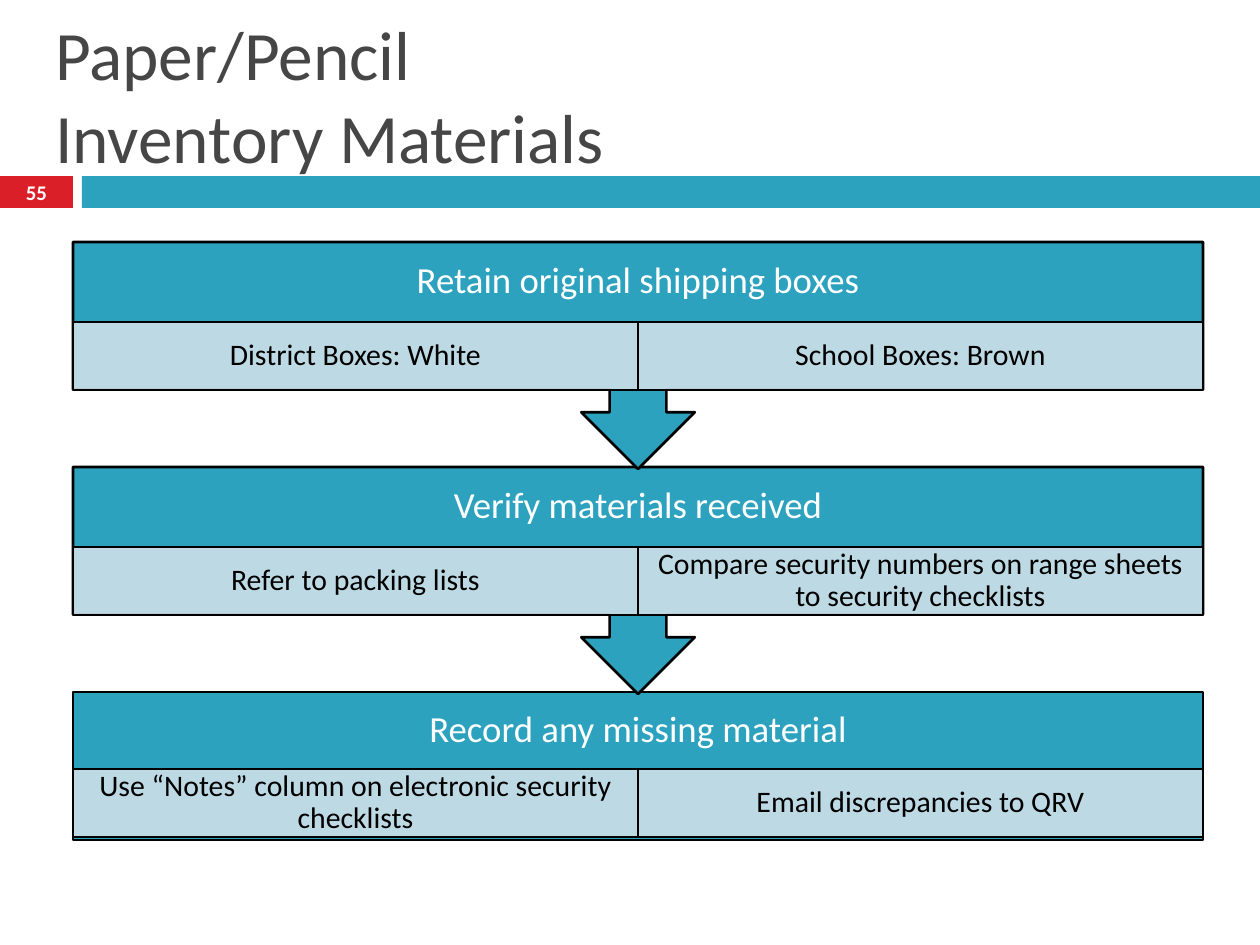
from lxml import etree
from pptx import Presentation
from pptx.dml.color import RGBColor
from pptx.enum.shapes import MSO_SHAPE
from pptx.enum.text import MSO_ANCHOR, MSO_AUTO_SIZE, PP_ALIGN
from pptx.oxml.ns import qn
from pptx.util import Pt

RECT, CALLOUT = MSO_SHAPE.RECTANGLE, MSO_SHAPE.UP_ARROW_CALLOUT
LEFT, CENTER, MIDDLE = PP_ALIGN.LEFT, PP_ALIGN.CENTER, MSO_ANCHOR.MIDDLE
SCALE = 914400 / 126

TITLE = "Paper/Pencil\vInventory Materials"
NUMBER = "55"
STEPS = [
    ("Retain original shipping boxes",
     ["District Boxes: White", "School Boxes: Brown"]),
    ("Verify materials received",
     ["Refer to packing lists",
      "Compare security numbers on range sheets to security checklists"]),
    ("Record any missing material",
     ["Use “Notes” column on electronic security checklists",
      "Email discrepancies to QRV"]),
]
TEAL, PALE, RED = "2DA2BF", "CDE0E8", "DA1F28"
BLACK, WHITE, GRAY = "000000", "FFFFFF", "464646"
X, Y, WIDE, PITCH = 73, 242, 1130, 225
BODY, FULL, HEAD, CELL = 148, 227, 80, 68


def px(n):
    return round(n * SCALE)


def color(code):
    return RGBColor.from_string(code)


def write(shape, text, size, code, align=CENTER, bold=False, pad=(13, 6), space=1.0):
    frame = shape.text_frame
    frame.text = text
    frame.word_wrap = True
    frame.auto_size = MSO_AUTO_SIZE.NONE
    frame.vertical_anchor = MIDDLE
    frame.margin_left = frame.margin_right = px(pad[0])
    frame.margin_top = frame.margin_bottom = px(pad[1])
    para = frame.paragraphs[0]
    para.alignment = align
    para.line_spacing = space
    para.font.name = "Calibri"
    para.font.size = Pt(size)
    para.font.bold = bold
    para.font.color.rgb = color(code)


def block(kind, x, y, w, h, fill, line=None):
    shape = slide.shapes.add_shape(kind, px(x), px(y), px(w), px(h))
    shape.shadow.inherit = False
    shape.fill.solid()
    shape.fill.fore_color.rgb = color(fill)
    if line:
        shape.line.color.rgb = color(line)
        shape.line.width = Pt(1.5)
    else:
        shape.line.fill.background()
    return shape


def label(x, y, w, h, *args, **opts):
    box = slide.shapes.add_textbox(px(x), px(y), px(w), px(h))
    write(box, *args, **opts)


def fade(shape, share):
    tone = next(shape._element.spPr.iter(qn("a:srgbClr")))
    etree.SubElement(tone, qn("a:alpha")).set("val", str(share * 1000))


deck = Presentation()
deck.slide_width, deck.slide_height = px(1260), px(945)
slide = deck.slides.add_slide(deck.slide_layouts[5])

block(RECT, 0, 176, 73, 32, RED)
block(RECT, 82, 176, 1178, 32, TEAL)
title = slide.shapes.title
title.left, title.top, title.width, title.height = map(px, (42, 42, 1176, 105))
write(title, TITLE, 39.6, GRAY, LEFT)
label(0, 175, 73, 34, NUMBER, 11.9, WHITE, bold=True)

last = len(STEPS) - 1
for i in range(last, -1, -1):
    head, cells = STEPS[i]
    top = Y + i * PITCH
    if i == last:
        block(RECT, X, top, WIDE, BODY, TEAL, BLACK)
        tall = HEAD - 3
    else:
        arrow = block(CALLOUT, X, top, WIDE, FULL, TEAL, BLACK)
        arrow.rotation = 180
        tall = HEAD
    label(X, top, WIDE, tall, head, 21, WHITE, pad=(20, 20), space=0.9)
    half = WIDE / len(cells)
    for j, text in enumerate(cells):
        cell = block(RECT, X + j * half, top + tall, half, CELL, PALE, BLACK)
        fade(cell, 90)
        write(cell, text, 17, BLACK, pad=(16, 3), space=0.9)

deck.save("out.pptx")
